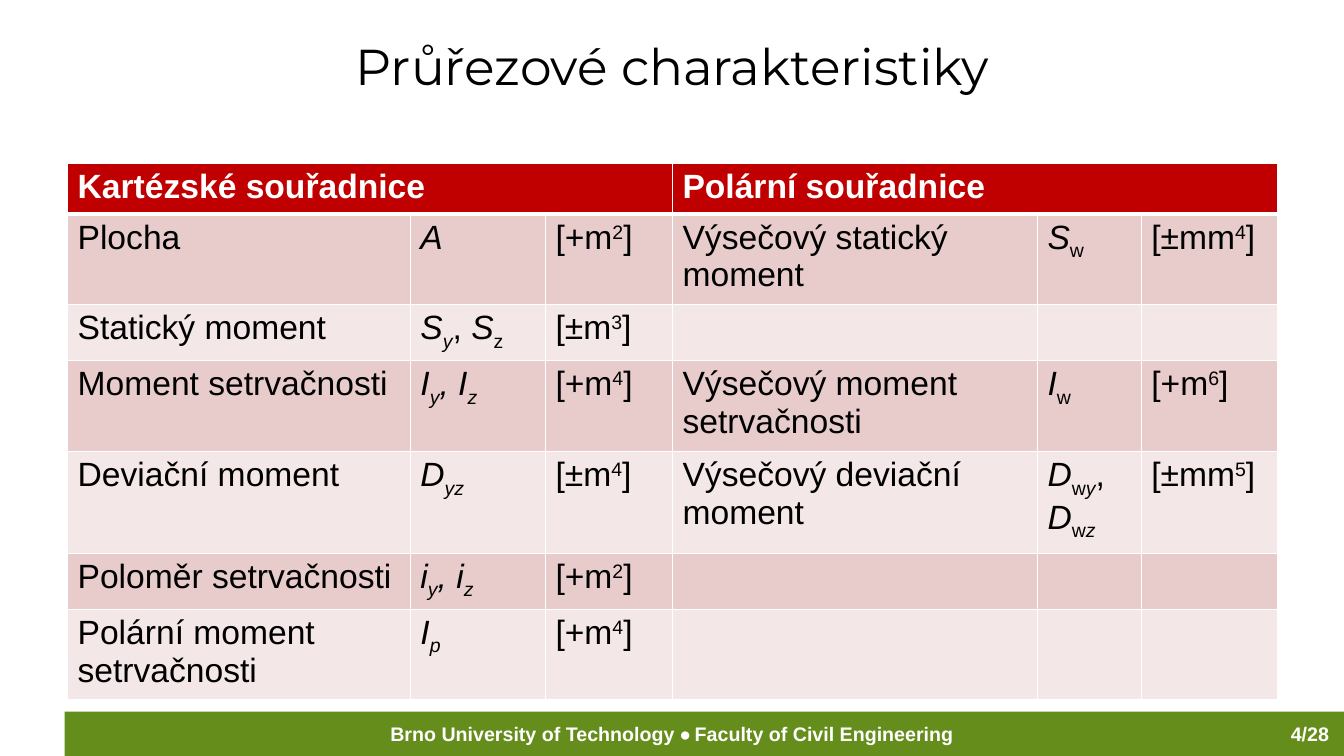
"""Build a slide with a table of cross-section characteristics."""
import pptx
import pptx.dml.color
import pptx.enum.shapes
import pptx.enum.text
import pptx.oxml
import pptx.oxml.ns
import pptx.util

TITLE = "Průřezové charakteristiky"
FOOTER = [("Brno University of Technology ", "Arial"), ("• ", "Calibri"),
          ("Faculty of Civil Engineering", "Arial")]
PAGE = "4/28"
HEADINGS = ["Kartézské souřadnice", "Polární souřadnice"]
# "|" parts the runs; a leading "/" is italic, "_" subscript, "^" superscript
ROWS = [
    ["Plocha", "/A", "[+m|^2|]", "Výsečový statický moment", "/S|_w", "[±mm|^4|]"],
    ["Statický moment", "/S|/_y|, |/S|_z", "[±m|^3|]", "", "", ""],
    ["Moment setrvačnosti", "/I|/_y|/, I|/_z", "[+m|^4|]",
     "Výsečový moment setrvačnosti", "/I|_w", "[+m|^6|]"],
    ["Deviační moment", "/D|/_yz", "[±m|^4|]",
     "Výsečový deviační moment", "/D|_w|/_y|, |/D|_w|/_z", "[±mm|^5|]"],
    ["Poloměr setrvačnosti", "/i|/_y|/, i|/_z", "[+m|^2|]", "", "", ""],
    ["Polární moment setrvačnosti", "/I|/_p", "[+m|^4|]", "", "", ""],
]
COLS = [3.4, 1.34, 1.26, 3.62, 1.03, 1.35]
HEIGHTS = [0.47, 0.84, 0.53, 0.84, 0.96, 0.53, 0.84]
COLORS = {"bar": "658D1B", "head": "C00000", "odd": "E8CCCC", "even": "F4E7E7",
          "white": "FFFFFF", "black": "000000"}
W, H = 13.33, 7.5
MARGIN = 0.67
ALIGN = pptx.enum.text.PP_ALIGN
inch = pptx.util.Inches


def rgb(name):
    """Return the named colour."""
    return pptx.dml.color.RGBColor.from_string(COLORS[name])


def write(p, text, size=24, font="Arial", color="black", bold=False, align=ALIGN.LEFT):
    """Add marked-up text to a paragraph."""
    p.alignment = align
    for part in filter(None, text.split("|")):
        body = part.lstrip("/_^")
        marks = part[:len(part) - len(body)]
        r = p.add_run()
        r.text = body
        f = r.font
        f.size, f.name, f.bold = pptx.util.Pt(size), font, bold
        f.italic = "/" in marks
        f.color.rgb = rgb(color)
        if "_" in marks or "^" in marks:
            r._r.get_or_add_rPr().set("baseline", "-25000" if "_" in marks else "30000")


def style_cell(cell, fill, top, bottom):
    """Fill a cell and draw its white borders."""
    tcPr = cell._tc.get_or_add_tcPr()
    for side, width in zip("LRTB", (1, 1, top, bottom)):
        tcPr.append(pptx.oxml.parse_xml(
            f'<a:ln{side} {pptx.oxml.ns.nsdecls("a")} w="{width * 12700}"><a:solidFill>'
            f'<a:srgbClr val="{COLORS["white"]}"/></a:solidFill></a:ln{side}>'))
    cell.fill.solid()
    cell.fill.fore_color.rgb = rgb(fill)


def add_footer(s):
    """Draw the green bar with its caption and page number."""
    sp = s.shapes.add_shape(pptx.enum.shapes.MSO_SHAPE.RECTANGLE,
                            inch(0.64), inch(7.06), inch(W - 0.64), inch(H - 7.06))
    sp.shadow.inherit = False
    sp.fill.solid()
    sp.fill.fore_color.rgb = rgb("bar")
    sp.line.fill.background()
    for left, width, runs, align in [(0, W, FOOTER, ALIGN.CENTER),
                                     (11.97, 1.31, [(PAGE, "Arial")], ALIGN.RIGHT)]:
        tf = s.shapes.add_textbox(inch(left), inch(7.11), inch(width), inch(0.34)).text_frame
        tf.word_wrap = True
        for text, font in runs:
            write(tf.paragraphs[0], text, size=14, font=font, color="white",
                  bold=True, align=align)


def add_characteristics(s):
    """Draw the table, a heading over each half."""
    half = len(COLS) // 2
    table = s.shapes.add_table(len(HEIGHTS), len(COLS), inch(MARGIN), inch(1.62),
                               inch(sum(COLS)), inch(sum(HEIGHTS))).table
    for col, width in zip(table.columns, COLS):
        col.width = inch(width)
    for row, height in zip(table.rows, HEIGHTS):
        row.height = inch(height)
    header = [text for h in HEADINGS for text in [h] + [""] * (half - 1)]
    for i, texts in enumerate([header] + ROWS):
        fill = "head" if i == 0 else "odd" if i % 2 else "even"
        for j, text in enumerate(texts):
            cell = table.cell(i, j)
            style_cell(cell, fill, top=3 if i == 1 else 1, bottom=3 if i == 0 else 1)
            write(cell.text_frame.paragraphs[0], text, bold=i == 0,
                  color="black" if i else "white")
    for j in range(0, len(COLS), half):
        table.cell(0, j).merge(table.cell(0, j + half - 1))


def main():
    """Build and save the slide."""
    prs = pptx.Presentation()
    prs.slide_width, prs.slide_height = inch(W), inch(H)
    s = prs.slides.add_slide(prs.slide_layouts[5])
    add_footer(s)
    title = s.shapes.title
    title.left, title.top = inch(MARGIN), inch(0.3)
    title.width, title.height = inch(12), inch(1.09)
    tf = title.text_frame
    tf.vertical_anchor = pptx.enum.text.MSO_ANCHOR.TOP
    tf.auto_size = pptx.enum.text.MSO_AUTO_SIZE.NONE
    write(tf.paragraphs[0], TITLE, size=36, font="Montserrat", align=ALIGN.CENTER)
    add_characteristics(s)
    prs.save("out.pptx")


if __name__ == "__main__":
    main()
